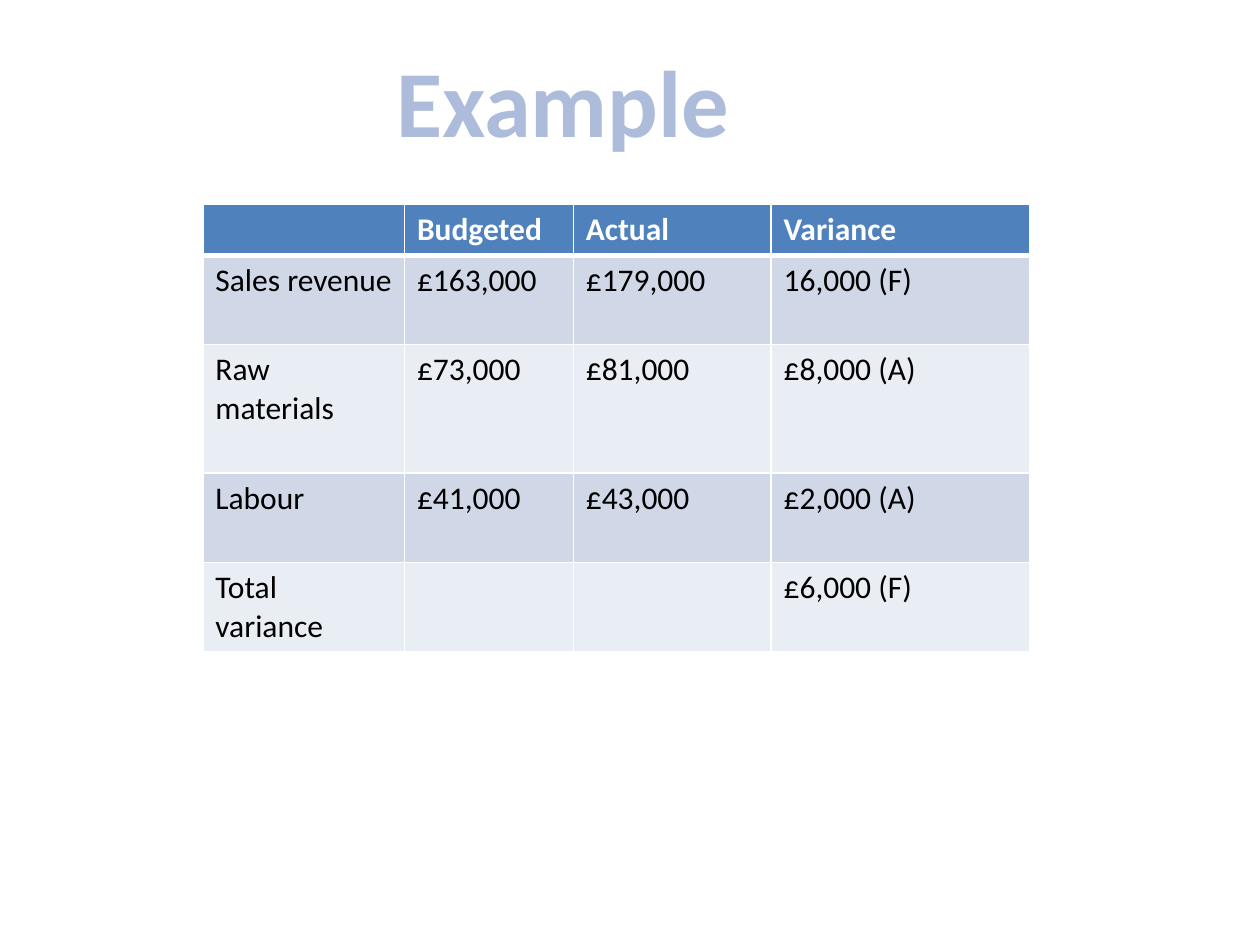
from lxml import etree
from pptx import Presentation
from pptx.dml import color
from pptx.enum import text
from pptx.oxml import ns
from pptx.util import Inches, Pt

FONT = "Calibri"
COLUMN_WIDTHS = [1.6, 1.34, 1.57, 2.05]
ROW_HEIGHTS = [0.4, 0.71, 1.02, 0.71, 0.4]
ROWS = [
    ["", "Budgeted ", "Actual ", "Variance "],
    ["Sales revenue ", "£163,000", "£179,000", "16,000 (F)"],
    ["Raw materials ", "£73,000", "£81,000", "£8,000 (A)"],
    ["Labour ", "£41,000", "£43,000", "£2,000 (A) "],
    ["Total variance ", "", "", "£6,000 (F)"],
]


def rgb(value):
    return color.RGBColor.from_string(value)


def format_text(para, size, fill, bold):
    for span in para.runs:
        span.font.name = FONT
        span.font.size = Pt(size)
        span.font.bold = bold
        span.font.color.rgb = rgb(fill)


def set_borders(cell, widths):
    properties = cell._tc.get_or_add_tcPr()
    for index, (side, width) in enumerate(widths.items()):
        line = etree.Element(ns.qn(f"a:ln{side}"), w=str(Pt(width)))
        fill = etree.SubElement(line, ns.qn("a:solidFill"))
        etree.SubElement(fill, ns.qn("a:srgbClr"), val="FFFFFF")
        properties.insert(index, line)


def add_title(page, title):
    box = page.shapes.add_textbox(Inches(3.03), Inches(0.29), Inches(3.04), Inches(1.01))
    frame = box.text_frame
    frame.text = title
    frame.word_wrap = False
    frame.auto_size = text.MSO_AUTO_SIZE.SHAPE_TO_FIT_TEXT
    para = frame.paragraphs[0]
    para.alignment = text.PP_ALIGN.CENTER
    format_text(para, 54, "AEBCDB", True)


def fill_cell(cell, wording, row):
    header = row == 0
    cell.fill.solid()
    cell.fill.fore_color.rgb = rgb("4F81BD" if header else ("E9EDF4", "D0D8E8")[row % 2])
    set_borders(cell, {"L": 1, "R": 1, "T": 3 if row == 1 else 1, "B": 3 if header else 1})
    if wording:
        cell.text_frame.text = wording
        format_text(cell.text_frame.paragraphs[0], 18, "FFFFFF" if header else "000000", header)


def add_variance_table(page):
    table = page.shapes.add_table(
        len(ROWS), len(COLUMN_WIDTHS), Inches(1.61), Inches(1.62),
        Inches(sum(COLUMN_WIDTHS)), Inches(sum(ROW_HEIGHTS)),
    ).table
    for column, width in zip(table.columns, COLUMN_WIDTHS):
        column.width = Inches(width)
    for row, (height, wordings) in enumerate(zip(ROW_HEIGHTS, ROWS)):
        table.rows[row].height = Inches(height)
        for column, wording in enumerate(wordings):
            fill_cell(table.cell(row, column), wording, row)


def main():
    deck = Presentation()
    deck.slide_width = Inches(10)
    deck.slide_height = Inches(7.5)
    page = deck.slides.add_slide(deck.slide_layouts[6])
    add_variance_table(page)
    add_title(page, "Example ")
    deck.save("out.pptx")


main()
